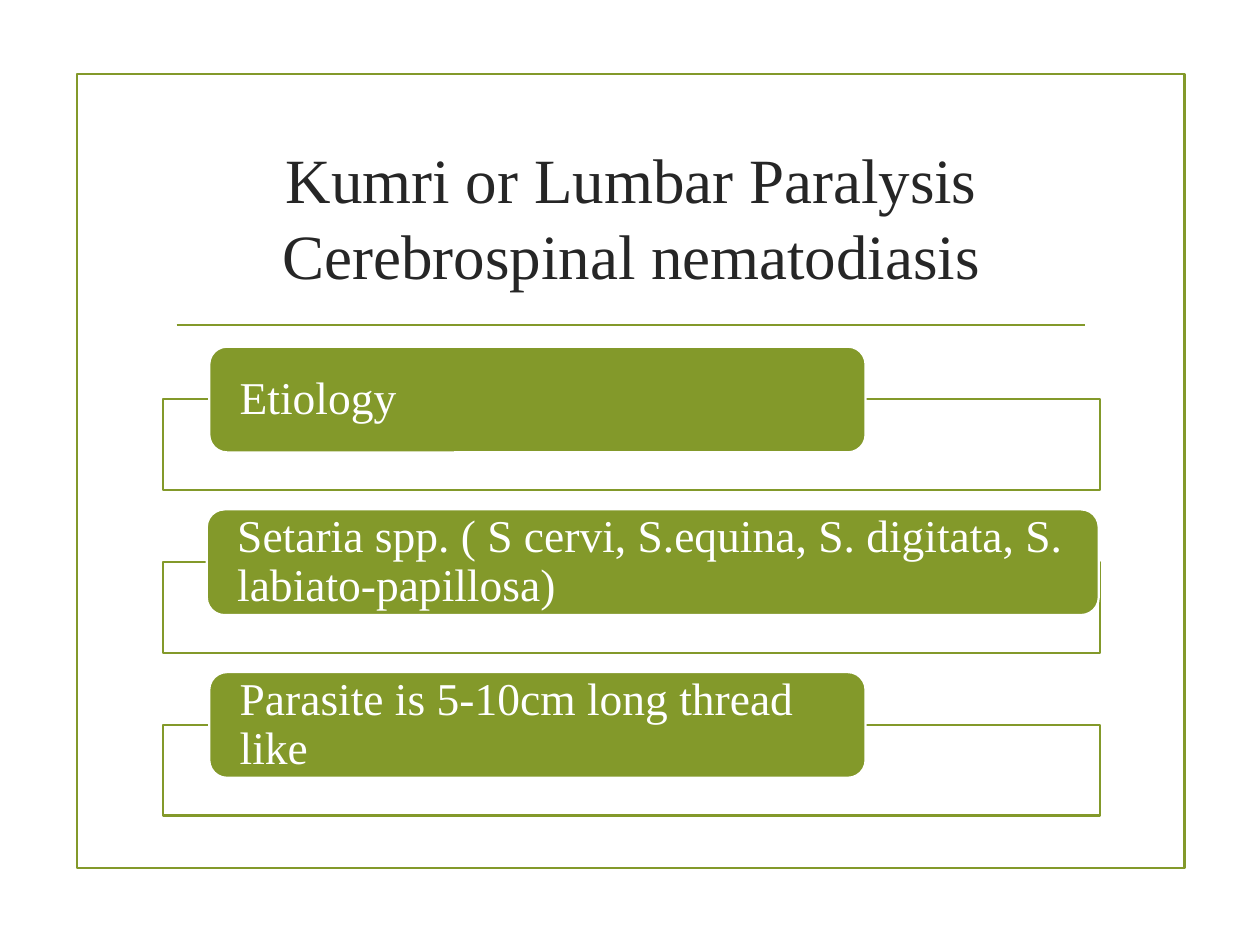
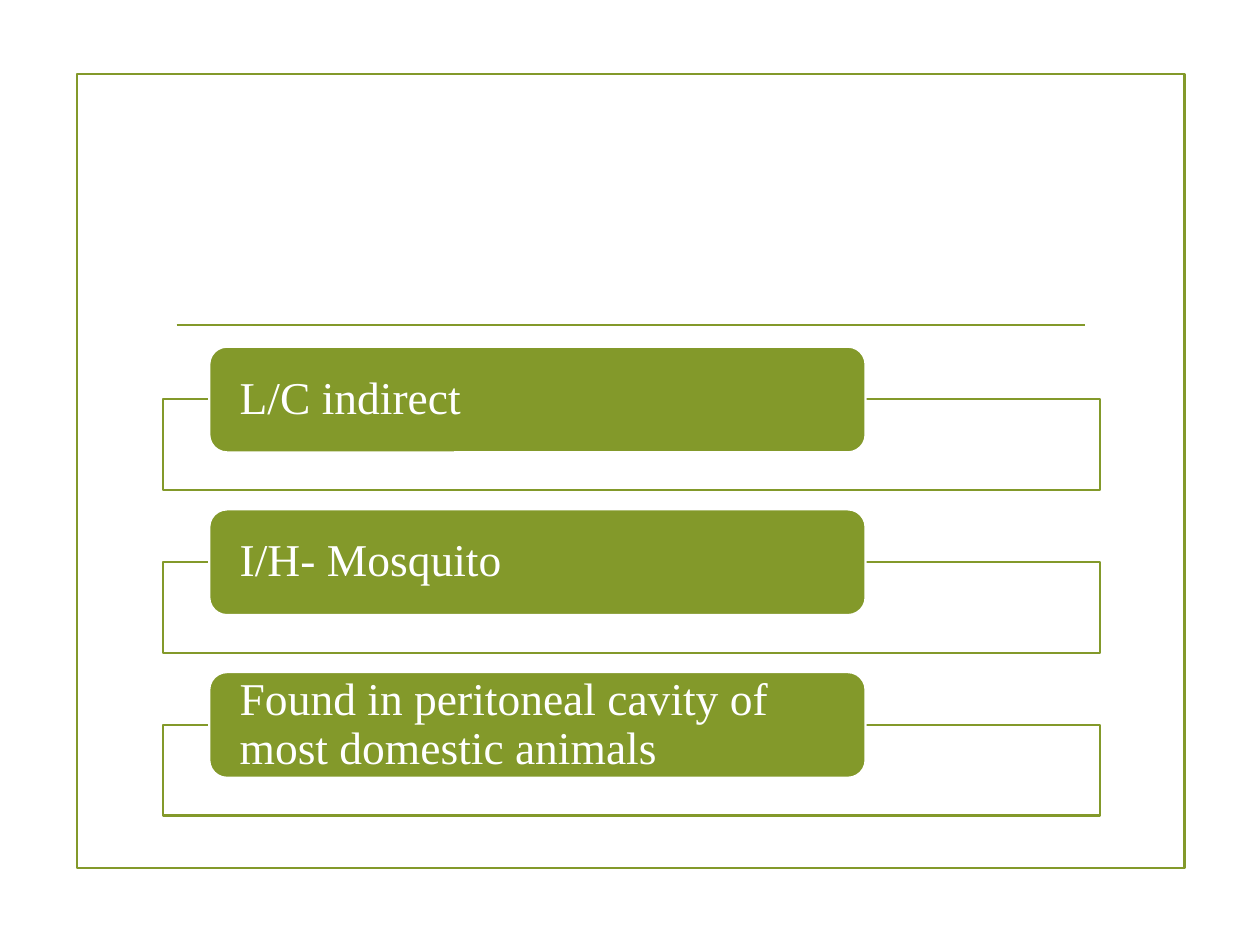
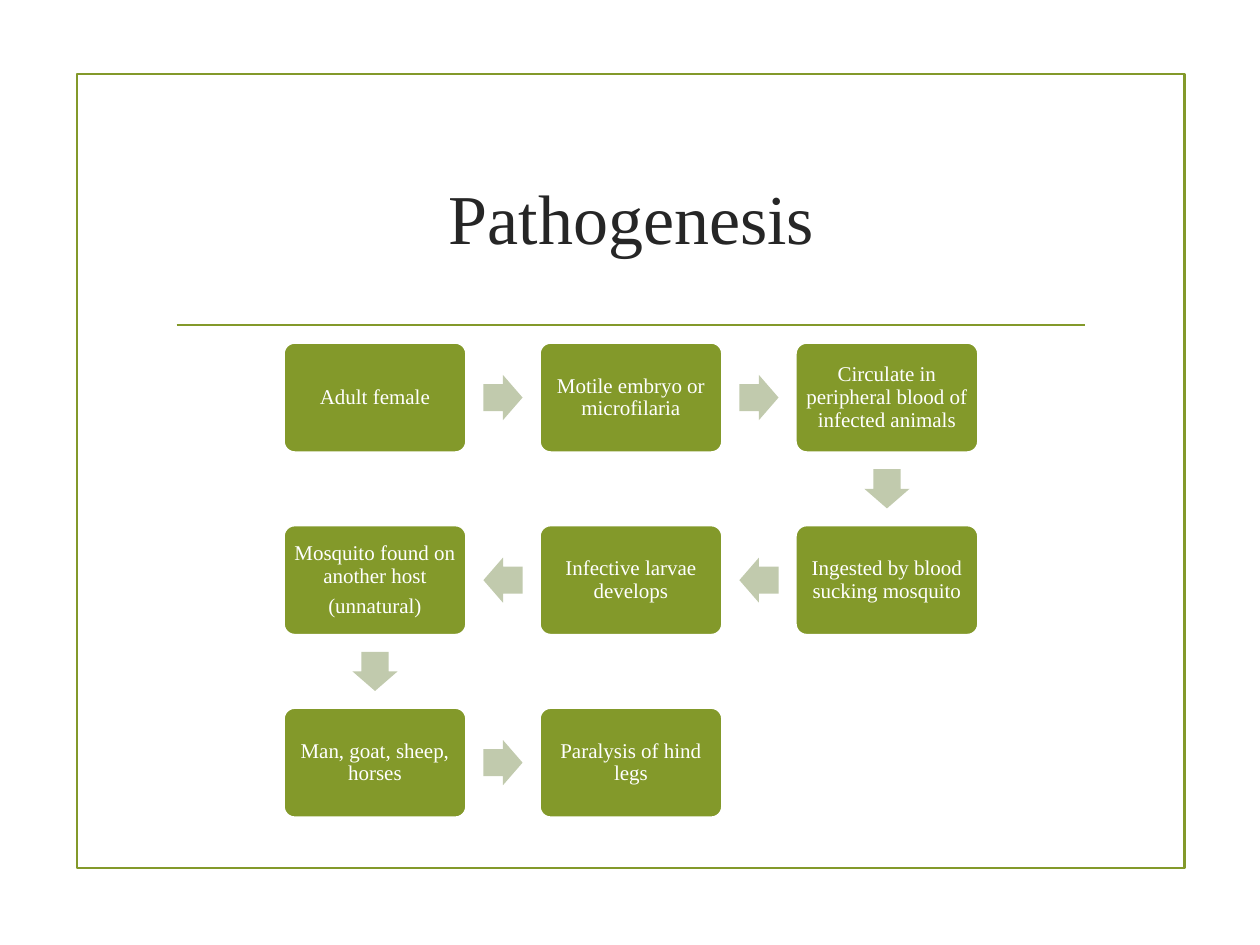
import pptx
import pptx.util
import pptx.dml.color
import pptx.oxml.ns
import pptx.enum.shapes
import pptx.enum.text
from lxml import etree

Cm, Pt = pptx.util.Cm, pptx.util.Pt
SHAPES = pptx.enum.shapes.MSO_SHAPE
ALIGN = pptx.enum.text.PP_ALIGN
MIDDLE = pptx.enum.text.MSO_ANCHOR.MIDDLE
qn = pptx.oxml.ns.qn

FONT = "Times New Roman"
GREEN, PALE_GREEN, WHITE, INK = "83992A", "C1CAAD", "FFFFFF", "262626"
LINE_WIDTH = Pt(1.25)


def paint(color_format, hex_color):
    color_format.rgb = pptx.dml.color.RGBColor.from_string(hex_color)


def add_box(slide, kind, left, top, width, height, fill=None, line=None,
            text="", size=12, align=ALIGN.LEFT, inset=(0, 0)):
    """Add a preset shape, sized in centimetres, with optional white text."""
    box = slide.shapes.add_shape(kind, Cm(left), Cm(top), Cm(width), Cm(height))
    box.shadow.inherit = False
    if fill:
        box.fill.solid()
        paint(box.fill.fore_color, fill)
    else:
        box.fill.background()
    if line:
        paint(box.line.color, line)
        box.line.width = LINE_WIDTH
    else:
        box.line.fill.background()
    if text:
        frame = box.text_frame
        frame.text = text
        frame.word_wrap = True
        frame.vertical_anchor = MIDDLE
        frame.margin_left = frame.margin_right = Cm(inset[0])
        frame.margin_top = frame.margin_bottom = Cm(inset[1])
        for paragraph in frame.paragraphs:
            paragraph.alignment = align
            paragraph.line_spacing = 0.9
            paragraph.space_after = Pt(size * 0.35)
            paragraph.font.name = FONT
            paragraph.font.size = Pt(size)
            paint(paragraph.font.color, WHITE)
    return box


prs = pptx.Presentation()
prs.slide_width, prs.slide_height = Cm(25.4), Cm(19.05)
TITLE_ONLY, BLANK = prs.slide_layouts[5], prs.slide_layouts[6]

# Slides with the shared frame, rule and title style
slides = []
for heading, size in [
    ("Kumri or Lumbar Paralysis\nCerebrospinal nematodiasis", 36),
    (None, None),
    ("Pathogenesis", 40),
]:
    slide = prs.slides.add_slide(TITLE_ONLY if heading else BLANK)
    slides.append(slide)
    add_box(slide, SHAPES.RECTANGLE, 1.55, 1.5, 22.33, 16, line=GREEN)
    rule = slide.shapes.add_connector(
        pptx.enum.shapes.MSO_CONNECTOR.STRAIGHT, Cm(3.56), Cm(6.55), Cm(21.87), Cm(6.55))
    paint(rule.line.color, GREEN)
    rule.line.width = LINE_WIDTH
    etree.SubElement(rule._element.spPr, qn("a:effectLst"))
    if heading:
        title = slide.shapes.title
        title.left, title.top = Cm(3.28), Cm(2.54)
        title.width, title.height = Cm(18.9), Cm(3.63)
        title.text_frame.auto_size = pptx.enum.text.MSO_AUTO_SIZE.NONE
        title.text_frame.vertical_anchor = MIDDLE
        line = title.text_frame.paragraphs[0]
        line.text = heading
        line.alignment = ALIGN.CENTER
        for run in line.runs:
            run.font.name = FONT
            run.font.size = Pt(size)
            paint(run.font.color, INK)

# Slides 1 and 2: facts on labels over outlined panels
NORMAL_LABEL, WIDE_LABEL = (4.22, 13.23), (4.17, 17.98)
etiology = [
    ("Etiology", NORMAL_LABEL),
    ("Setaria spp. ( S cervi, S.equina, S. digitata, S. labiato-papillosa)", WIDE_LABEL),
    ("Parasite is 5-10cm long thread like", NORMAL_LABEL),
]
life_cycle = [
    ("L/C indirect", NORMAL_LABEL),
    ("I/H- Mosquito", NORMAL_LABEL),
    ("Found in peritoneal cavity of most domestic animals", NORMAL_LABEL),
]
for slide, facts in zip(slides, [etiology, life_cycle]):
    for row, (fact, (left, width)) in enumerate(facts):
        top = 6.99 + row * 3.28
        panel = add_box(slide, SHAPES.RECTANGLE, 3.28, top + 1.06, 18.9, 1.83, WHITE, GREEN)
        panel_color = panel._element.spPr.find(qn("a:solidFill"))[0]
        etree.SubElement(panel_color, qn("a:alpha"), val="90000")
        add_box(slide, SHAPES.ROUNDED_RECTANGLE, left, top, width, 2.13, GREEN, WHITE,
                fact, 26, inset=(0.51, 0))

# Slide 3: steps that wind left to right, then right to left
steps = [
    "Adult female",
    "Motile embryo or microfilaria",
    "Circulate in peripheral blood of infected animals",
    "Ingested by blood sucking mosquito",
    "Infective larvae develops",
    "Mosquito found on another host\n(unnatural)",
    "Man, goat, sheep, horses",
    "Paralysis of hind legs",
]
COLUMNS = 3
STEP_W, STEP_H = 3.68, 2.21
ARROW_W, ARROW_H = 0.79, 0.91
centres = []
for index, step in enumerate(steps):
    row, column = divmod(index, COLUMNS)
    if row % 2:
        column = COLUMNS - 1 - column
    left, top = 5.72 + column * 5.16, 6.91 + row * 3.68
    centres.append((left + STEP_W / 2, top + STEP_H / 2))
    box = add_box(slides[2], SHAPES.ROUNDED_RECTANGLE, left, top, STEP_W, STEP_H, GREEN, WHITE,
                  step, 12, ALIGN.CENTER, (0.13, 0.13))
    box.adjustments[0] = 0.1

# Arrows halfway between consecutive steps
for (x1, y1), (x2, y2) in zip(centres, centres[1:]):
    arrow = add_box(slides[2], SHAPES.RIGHT_ARROW, (x1 + x2 - ARROW_W) / 2,
                    (y1 + y2 - ARROW_H) / 2, ARROW_W, ARROW_H, PALE_GREEN)
    arrow.adjustments[0], arrow.adjustments[1] = 0.6, 0.5
    if y2 > y1:
        arrow.rotation = 90
    elif x2 < x1:
        arrow.rotation = 180

prs.save("out.pptx")
